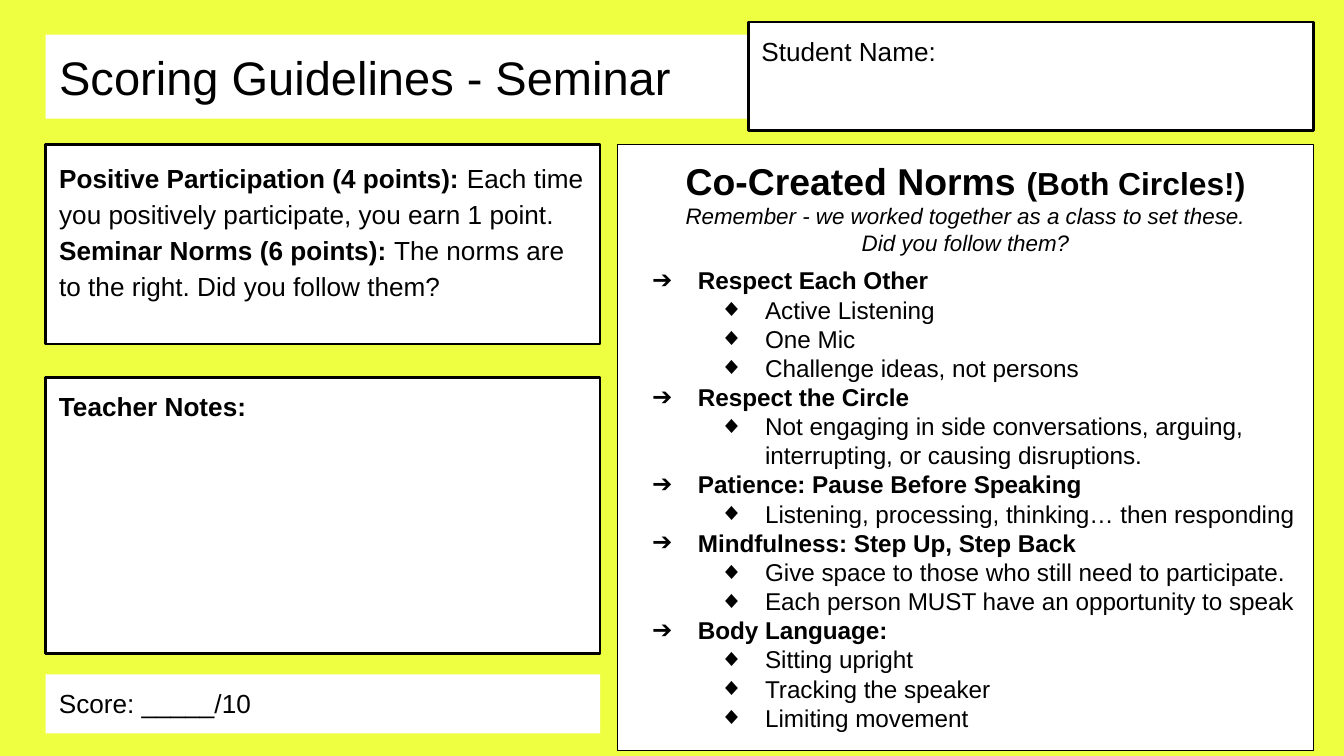
from dataclasses import dataclass

import pptx
import pptx.dml.color
import pptx.enum.text
import pptx.oxml.ns
import pptx.util
from lxml import etree

Pt = pptx.util.Pt
RGBColor = pptx.dml.color.RGBColor
Align = pptx.enum.text.PP_ALIGN
Anchor = pptx.enum.text.MSO_ANCHOR

LIME = RGBColor(0xEE, 0xFF, 0x41)
WHITE = RGBColor(0xFF, 0xFF, 0xFF)
BLACK = RGBColor(0, 0, 0)
FONT = "Arial"
INSET = 7.2
LEFT, WIDTH = 24.5, 297


@dataclass
class Run:
    text: str
    size: float = 14
    bold: bool = False
    slant: bool = False


@dataclass
class Para:
    runs: list[Run]
    align: Align = Align.LEFT
    level: int = 0
    mark: str = ""
    space: float = 1
    before: float = 0


@dataclass
class Box:
    left: float
    top: float
    width: float
    height: float
    line: float
    paras: list[Para]


@dataclass
class Norm:
    name: str
    points: list[str]


def set_mark(para, item: Para) -> None:
    props = para._p.get_or_add_pPr()
    indent = 36 * (item.level + 1) if item.mark else 0
    props.set("marL", str(Pt(indent)))
    props.set("indent", str(Pt(-24.5 if item.mark else 0)))
    qn = pptx.oxml.ns.qn
    if not item.mark:
        etree.SubElement(props, qn("a:buNone"))
        return
    color = etree.SubElement(props, qn("a:buClr"))
    etree.SubElement(color, qn("a:srgbClr")).set("val", str(BLACK))
    etree.SubElement(props, qn("a:buFont")).set("typeface", FONT)
    etree.SubElement(props, qn("a:buChar")).set("char", item.mark)


def fill_text(frame, paras: list[Para]) -> None:
    frame.word_wrap = True
    frame.auto_size = pptx.enum.text.MSO_AUTO_SIZE.NONE
    frame.margin_left = frame.margin_right = Pt(INSET)
    frame.margin_top = frame.margin_bottom = Pt(INSET)
    for pos, item in enumerate(paras):
        para = frame.add_paragraph() if pos else frame.paragraphs[0]
        para.alignment = item.align
        para.level = item.level
        para.line_spacing = item.space
        para.space_before = Pt(item.before)
        para.space_after = Pt(0)
        set_mark(para, item)
        for part in item.runs:
            run = para.add_run()
            run.text = part.text
            run.font.name = FONT
            run.font.size = Pt(part.size)
            run.font.bold = part.bold
            run.font.italic = part.slant
            run.font.color.rgb = BLACK


def draw_box(slide, box: Box, holder=None) -> None:
    place = [Pt(n) for n in (box.left, box.top, box.width, box.height)]
    shape = holder or slide.shapes.add_textbox(*place)
    shape.left, shape.top, shape.width, shape.height = place
    shape.fill.solid()
    shape.fill.fore_color.rgb = WHITE
    if box.line:
        shape.line.color.rgb = BLACK
        shape.line.width = Pt(box.line)
    else:
        shape.line.fill.background()
    fill_text(shape.text_frame, box.paras)
    shape.text_frame.vertical_anchor = Anchor.TOP


NORMS = [
    Norm("Respect Each Other",
         ["Active Listening", "One Mic", "Challenge ideas, not persons"]),
    Norm("Respect the Circle",
         ["Not engaging in side conversations, arguing, "
          "interrupting, or causing disruptions."]),
    Norm("Patience: Pause Before Speaking",
         ["Listening, processing, thinking… then responding"]),
    Norm("Mindfulness: Step Up, Step Back",
         ["Give space to those who still need to participate.",
          "Each person MUST have an opportunity to speak"]),
    Norm("Body Language:",
         ["Sitting upright", "Tracking the speaker", "Limiting movement"]),
]

RULES = [
    ("Positive Participation (4 points): ",
     "Each time you positively participate, you earn 1 point."),
    ("Seminar Norms (6 points): ",
     "The norms are to the right. Did you follow them?"),
]


def norm_paras() -> list[Para]:
    paras = [Para([Run("Co-Created Norms ", 20, True),
                   Run("(Both Circles!)", 17, True)], Align.CENTER)]
    for text in ("Remember - we worked together as a class to set these.",
                 "Did you follow them?"):
        paras.append(Para([Run(text, 12, slant=True)], Align.CENTER))
    for pos, norm in enumerate(NORMS):
        paras.append(Para([Run(norm.name, 13, True)], mark="➔",
                          before=0 if pos else 5))
        for text in norm.points:
            paras.append(Para([Run(text, 13)], level=1, mark="◆"))
    return paras


def main() -> None:
    deck = pptx.Presentation()
    deck.slide_width, deck.slide_height = Pt(720), Pt(405)
    slide = deck.slides.add_slide(deck.slide_layouts[1])
    back = slide.background.fill
    back.solid()
    back.fore_color.rgb = LIME

    title = Box(LEFT, 18.5, 671, 45, 0,
                [Para([Run("Scoring Guidelines - Seminar", 25.2)])])
    rules = Box(LEFT, 77.3, WIDTH, 107, 1.5,
                [Para([Run(head, bold=True), Run(text)], space=1.15)
                 for head, text in RULES])
    draw_box(slide, title, slide.shapes.title)
    slide.shapes.title.text_frame.vertical_anchor = Anchor.MIDDLE
    draw_box(slide, rules, slide.placeholders[1])

    for box in (
        Box(LEFT, 202.2, WIDTH, 148, 1.5,
            [Para([Run("Teacher Notes:", bold=True)])]),
        Box(400.8, 11.8, 303, 58, 1.5, [Para([Run("Student Name:")])]),
        Box(LEFT, 361.3, WIDTH, 31.7, 0, [Para([Run("Score: _____/10")])]),
        Box(330.8, 77.3, 373, 324.7, 0.75, norm_paras()),
    ):
        draw_box(slide, box)
    deck.save("out.pptx")


if __name__ == "__main__":
    main()
